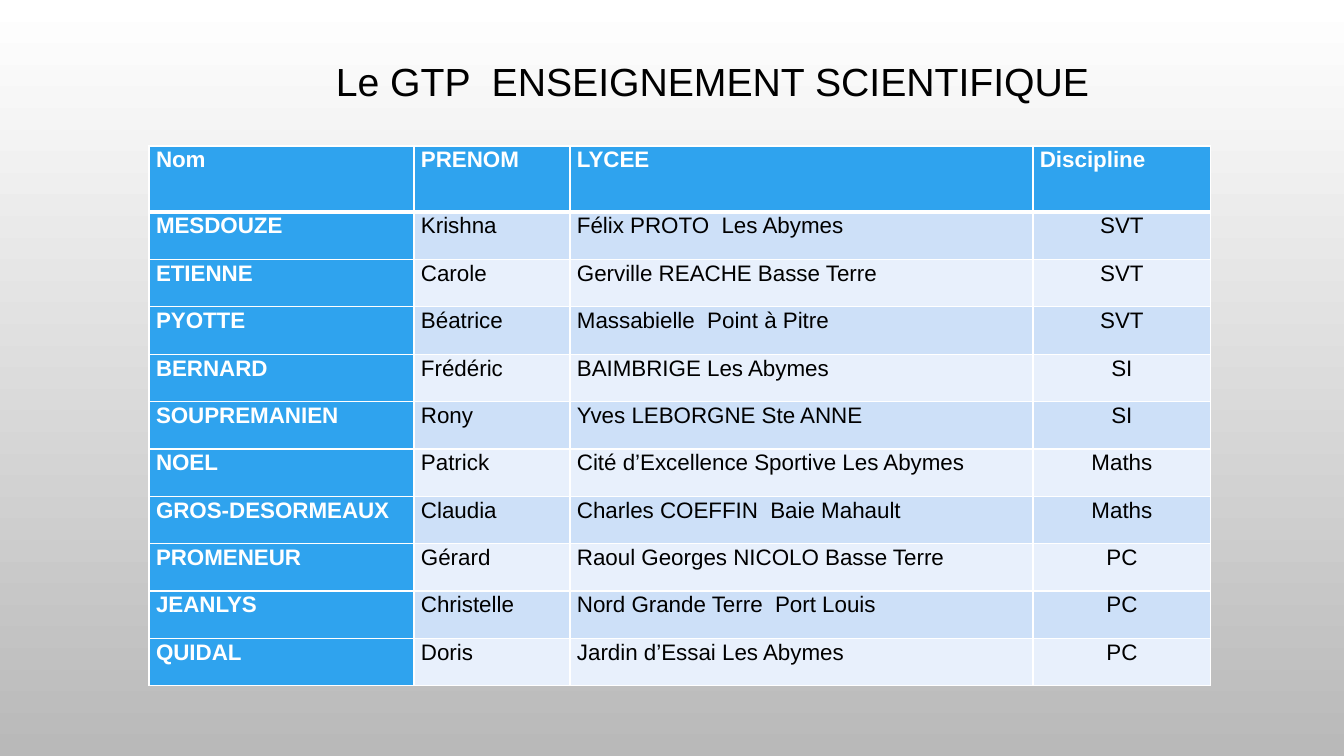
from dataclasses import astuple, dataclass

from lxml import etree
from pptx import Presentation
from pptx.dml.color import RGBColor
from pptx.enum.text import MSO_ANCHOR, MSO_AUTO_SIZE, PP_ALIGN
from pptx.oxml.ns import qn
from pptx.slide import Slide
from pptx.table import _Cell
from pptx.util import Emu, Pt

LEFT, CENTER = PP_ALIGN.LEFT, PP_ALIGN.CENTER
TOP = MSO_ANCHOR.TOP
NO_AUTOFIT = MSO_AUTO_SIZE.NONE
TITLE_ONLY = 5
PX_PER_INCH = 100.8


@dataclass(frozen=True)
class Theme:
    font: str = "Arial"
    title_size: int = 28
    table_size: int = 16
    line_spacing: float = 1.07
    ink: str = "000000"
    white: str = "FFFFFF"
    accent: str = "2FA3EE"
    bands: tuple[str, str] = ("CDE0F8", "E8F0FC")
    backdrop: tuple[str, str] = ("FFFFFF", "B9B9B9")
    thin_border: int = 1
    header_border: int = 3


@dataclass(frozen=True)
class Member:
    surname: str
    first_name: str
    school: str
    subject: str


THEME = Theme()
HEADINGS = Member("Nom", "PRENOM", "LYCEE", "Discipline")
MEMBERS = [
    Member("MESDOUZE", "Krishna", "Félix PROTO  Les Abymes", "SVT"),
    Member("ETIENNE", "Carole", "Gerville REACHE Basse Terre", "SVT"),
    Member("PYOTTE", "Béatrice", "Massabielle  Point à Pitre", "SVT"),
    Member("BERNARD", "Frédéric", "BAIMBRIGE Les Abymes", "SI"),
    Member("SOUPREMANIEN", "Rony", "Yves LEBORGNE Ste ANNE", "SI"),
    Member("NOEL", "Patrick", "Cité d’Excellence Sportive Les Abymes", "Maths"),
    Member("GROS-DESORMEAUX", "Claudia", "Charles COEFFIN  Baie Mahault", "Maths"),
    Member("PROMENEUR", "Gérard", "Raoul Georges NICOLO Basse Terre", "PC"),
    Member("JEANLYS", "Christelle", "Nord Grande Terre  Port Louis", "PC"),
    Member("QUIDAL", "Doris", "Jardin d’Essai Les Abymes", "PC"),
]
COLUMN_WIDTHS = (265, 156, 463, 178)
HEADER_HEIGHT = 66
MEMBERS_HEIGHT = 474
SUBJECT_COLUMN = 3


def px(length: int) -> Emu:
    return Emu(round(length * 914400 / PX_PER_INCH))


def paint_backdrop(slide: Slide) -> None:
    fill = slide.background.fill
    fill.gradient()
    fill.gradient_angle = 270
    for stop, color in zip(fill.gradient_stops, THEME.backdrop):
        stop.color.rgb = RGBColor.from_string(color)


def write_title(slide: Slide, wording: str) -> None:
    title = slide.shapes.title
    title.left, title.top, title.width, title.height = px(309), px(52), px(807), px(58)
    frame = title.text_frame
    frame.text = wording
    frame.word_wrap = True
    frame.auto_size = NO_AUTOFIT
    frame.vertical_anchor = TOP
    heading = frame.paragraphs[0]
    heading.alignment = CENTER
    heading.font.name = THEME.font
    heading.font.size = Pt(THEME.title_size)
    heading.font.color.rgb = RGBColor.from_string(THEME.ink)


def draw_borders(cell: _Cell, top: int, bottom: int) -> None:
    properties = cell._tc.get_or_add_tcPr()
    widths = {"lnL": THEME.thin_border, "lnR": THEME.thin_border, "lnT": top, "lnB": bottom}
    for side, width in widths.items():
        border = etree.SubElement(properties, qn(f"a:{side}"), w=str(Pt(width)))
        solid = etree.SubElement(border, qn("a:solidFill"))
        etree.SubElement(solid, qn("a:srgbClr"), val=THEME.white)


def fill_cell(cell: _Cell, wording: str, row: int, column: int) -> None:
    is_header = row == 0
    is_accented = is_header or column == 0
    draw_borders(
        cell,
        top=THEME.header_border if row == 1 else THEME.thin_border,
        bottom=THEME.header_border if is_header else THEME.thin_border,
    )
    background = THEME.accent if is_accented else THEME.bands[(row - 1) % 2]
    cell.fill.solid()
    cell.fill.fore_color.rgb = RGBColor.from_string(background)
    cell.margin_left = cell.margin_right = px(7)
    cell.margin_top = cell.margin_bottom = 0
    cell.vertical_anchor = TOP
    cell.text_frame.text = wording
    entry = cell.text_frame.paragraphs[0]
    entry.alignment = CENTER if column == SUBJECT_COLUMN and not is_header else LEFT
    entry.line_spacing = THEME.line_spacing
    for run in entry.runs:
        run.font.name = THEME.font
        run.font.size = Pt(THEME.table_size)
        run.font.bold = is_accented
        run.font.color.rgb = RGBColor.from_string(THEME.white if is_accented else THEME.ink)


def add_members(slide: Slide) -> None:
    entries = [HEADINGS, *MEMBERS]
    roster = slide.shapes.add_table(
        len(entries), len(COLUMN_WIDTHS), px(149), px(146),
        px(sum(COLUMN_WIDTHS)), px(HEADER_HEIGHT + MEMBERS_HEIGHT),
    ).table
    for column, width in zip(roster.columns, COLUMN_WIDTHS):
        column.width = px(width)
    for row_index, member in enumerate(entries):
        member_height = Emu(px(MEMBERS_HEIGHT) // len(MEMBERS))
        roster.rows[row_index].height = member_height if row_index else px(HEADER_HEIGHT)
        for column_index, wording in enumerate(astuple(member)):
            fill_cell(roster.cell(row_index, column_index), wording, row_index, column_index)


def main() -> None:
    deck = Presentation()
    deck.slide_width, deck.slide_height = px(1344), px(756)
    slide = deck.slides.add_slide(deck.slide_layouts[TITLE_ONLY])
    paint_backdrop(slide)
    write_title(slide, "Le GTP  ENSEIGNEMENT SCIENTIFIQUE")
    add_members(slide)
    deck.save("out.pptx")


if __name__ == "__main__":
    main()
